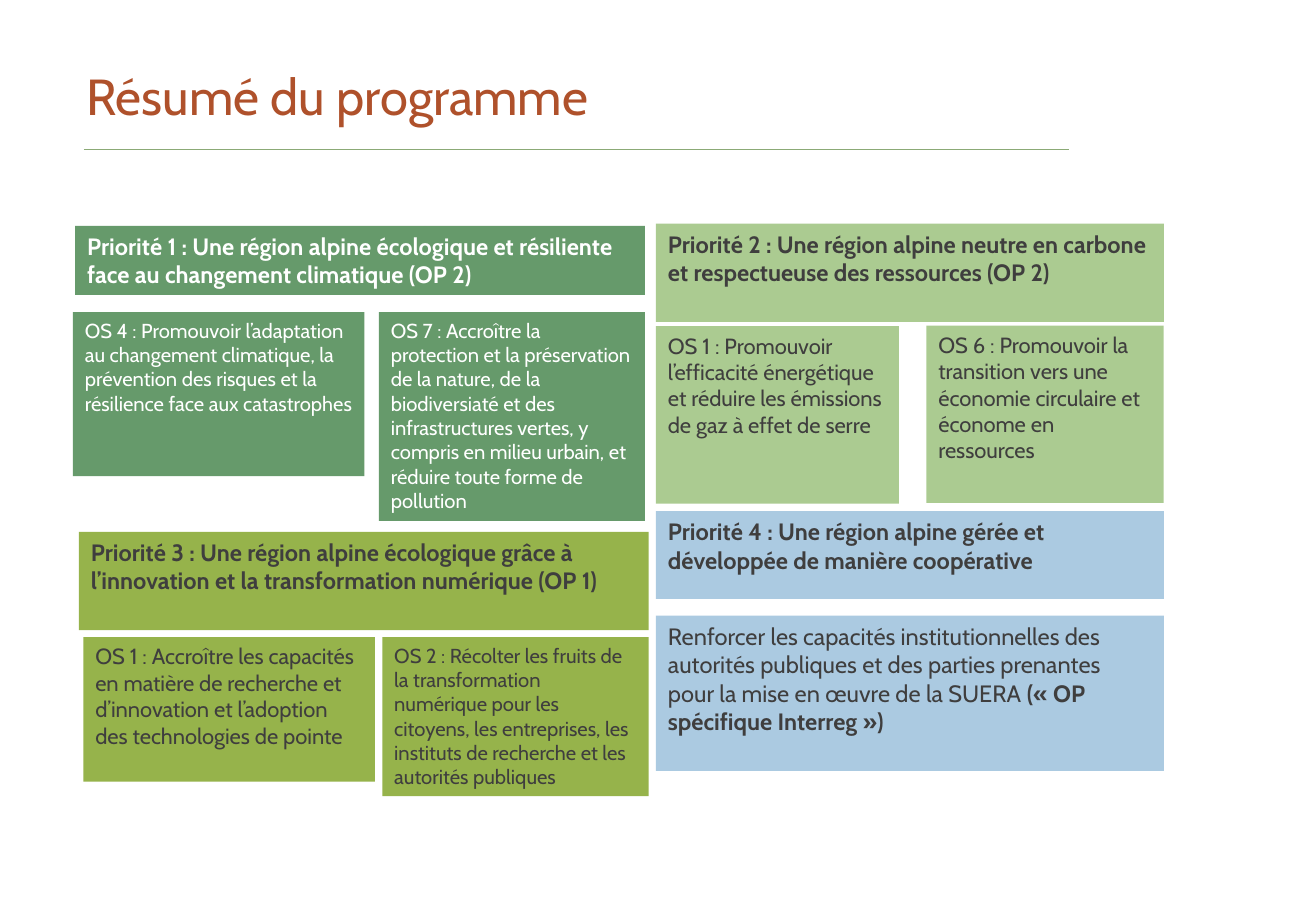
from pptx import Presentation
from pptx.dml.color import RGBColor
from pptx.enum.shapes import MSO_CONNECTOR, MSO_SHAPE
from pptx.enum.text import MSO_ANCHOR, MSO_AUTO_SIZE, PP_ALIGN
from pptx.oxml.ns import qn
from pptx.util import Pt
from lxml import etree

RECTANGLE = MSO_SHAPE.RECTANGLE
STRAIGHT = MSO_CONNECTOR.STRAIGHT
TOP, BOTTOM = MSO_ANCHOR.TOP, MSO_ANCHOR.BOTTOM
LEFT = PP_ALIGN.LEFT
NO_AUTOFIT = MSO_AUTO_SIZE.NONE

FONT = "Cabin"
RUST, RULE, DARK, WHITE = "AF512B", "8BAA76", "3F3E3E", "FFFFFF"
FOREST, SAGE, OLIVE, SKY = "669A6B", "ABCB91", "96B34B", "ABCAE1"

TITLE = "Résumé du programme"
TITLE_PLACE = (43.9, 9.4, 548.6, 68.4)
RULE_LEFT, RULE_RIGHT, RULE_TOP = 49.7, 633.6, 88.6

# Right edge shared by the boxes of each priority
RIGHT_1, RIGHT_3, RIGHT_COLUMN = 382.3, 384.5, 689.8
COLUMN_LEFT = 388.8

# Each priority: fill, text colour, right edge, boxes.
# Each box: left, top, width (None = up to the right edge), height, size, (text, bold) spans.
PRIORITIES = [
    (FOREST, WHITE, RIGHT_1, [
        (44.6, 133.9, None, 41, 14, [
            ("Priorité 1 : Une région alpine écologique et résiliente "
             "face au changement climatique (OP 2)", True)]),
        (43.2, 185, 172.8, 97.2, 12, [
            ("OS 4 : Promouvoir l’adaptation au changement climatique, la "
             "prévention des risques et la résilience face aux catastrophes", False)]),
        (224.6, 185, None, 123.8, 12, [
            ("OS 7 : Accroître la protection et la préservation de la nature, de la "
             "biodiversiaté et des infrastructures vertes, y compris en milieu urbain, "
             "et réduire toute forme de pollution", False)]),
    ]),
    (SAGE, DARK, RIGHT_COLUMN, [
        (COLUMN_LEFT, 132.5, None, 58.3, 14, [
            ("Priorité 2 : Une région alpine neutre en carbone "
             "et respectueuse des ressources (OP 2)", True)]),
        (COLUMN_LEFT, 193.4, 144, 105.1, 13, [
            ("OS 1 : Promouvoir l’efficacité énergétique et réduire les "
             "émissions de gaz à effet de serre", False)]),
        (549.1, 193, None, 105.1, 13, [
            ("OS 6 : Promouvoir la transition vers une économie circulaire "
             "et économe en ressources", False)]),
    ]),
    (OLIVE, DARK, RIGHT_3, [
        (46.8, 315.2, None, 58.3, 14, [
            ("Priorité 3 : Une région alpine écologique grâce à "
             "l’innovation et la transformation numérique (OP 1)", True)]),
        (49.4, 377.6, 172.8, 85.7, 13, [
            ("OS 1 : Accroître les capacités en matière de recherche et "
             "d’innovation et l’adoption des technologies de pointe", False)]),
        (226.6, 377.6, None, 94.3, 12, [
            ("OS 2 : Récolter les fruits de la transformation numérique pour les "
             "citoyens, les entreprises, les instituts de recherche et les "
             "autorités publiques", False)]),
    ]),
    (SKY, DARK, RIGHT_COLUMN, [
        (COLUMN_LEFT, 303, None, 52, 14, [
            ("Priorité 4 : Une région alpine gérée et développée "
             "de manière coopérative", True)]),
        (COLUMN_LEFT, 365, None, 92, 14, [
            ("Renforcer les capacités institutionnelles des autorités publiques et des "
             "parties prenantes pour la mise en œuvre de la SUERA ", False),
            ("(« OP spécifique Interreg »)", True)]),
    ]),
]


def color(value):
    return RGBColor.from_string(value)


def write(frame, spans, size, ink, anchor):
    frame.word_wrap = True
    frame.auto_size = NO_AUTOFIT
    frame.vertical_anchor = anchor
    para = frame.paragraphs[0]
    para.alignment = LEFT
    for text, bold in spans:
        span = para.add_run()
        span.text = text
        span.font.name = FONT
        span.font.size = Pt(size)
        span.font.bold = bold
        span.font.color.rgb = color(ink)


def add_title(page):
    title = page.shapes.title
    title.left, title.top, title.width, title.height = map(Pt, TITLE_PLACE)
    write(title.text_frame, [(TITLE, False)], 30, RUST, BOTTOM)


def add_rule(page):
    rule = page.shapes.add_connector(
        STRAIGHT, Pt(RULE_LEFT), Pt(RULE_TOP), Pt(RULE_RIGHT), Pt(RULE_TOP))
    rule.line.color.rgb = color(RULE)
    rule.line.width = Pt(0.5)
    properties = rule.element.find(qn("p:spPr"))
    etree.SubElement(properties, qn("a:effectLst"))


def add_priority(page, fill, ink, right, boxes):
    for left, top, width, height, size, spans in boxes:
        width = width or right - left
        box = page.shapes.add_shape(RECTANGLE, Pt(left), Pt(top), Pt(width), Pt(height))
        box.shadow.inherit = False
        box.fill.solid()
        box.fill.fore_color.rgb = color(fill)
        box.line.fill.background()
        write(box.text_frame, spans, size, ink, TOP)


def main():
    deck = Presentation()
    deck.slide_width, deck.slide_height = Pt(780), Pt(540)
    page = deck.slides.add_slide(deck.slide_layouts[5])
    add_rule(page)
    add_title(page)
    for priority in PRIORITIES:
        add_priority(page, *priority)
    deck.save("out.pptx")


if __name__ == "__main__":
    main()
